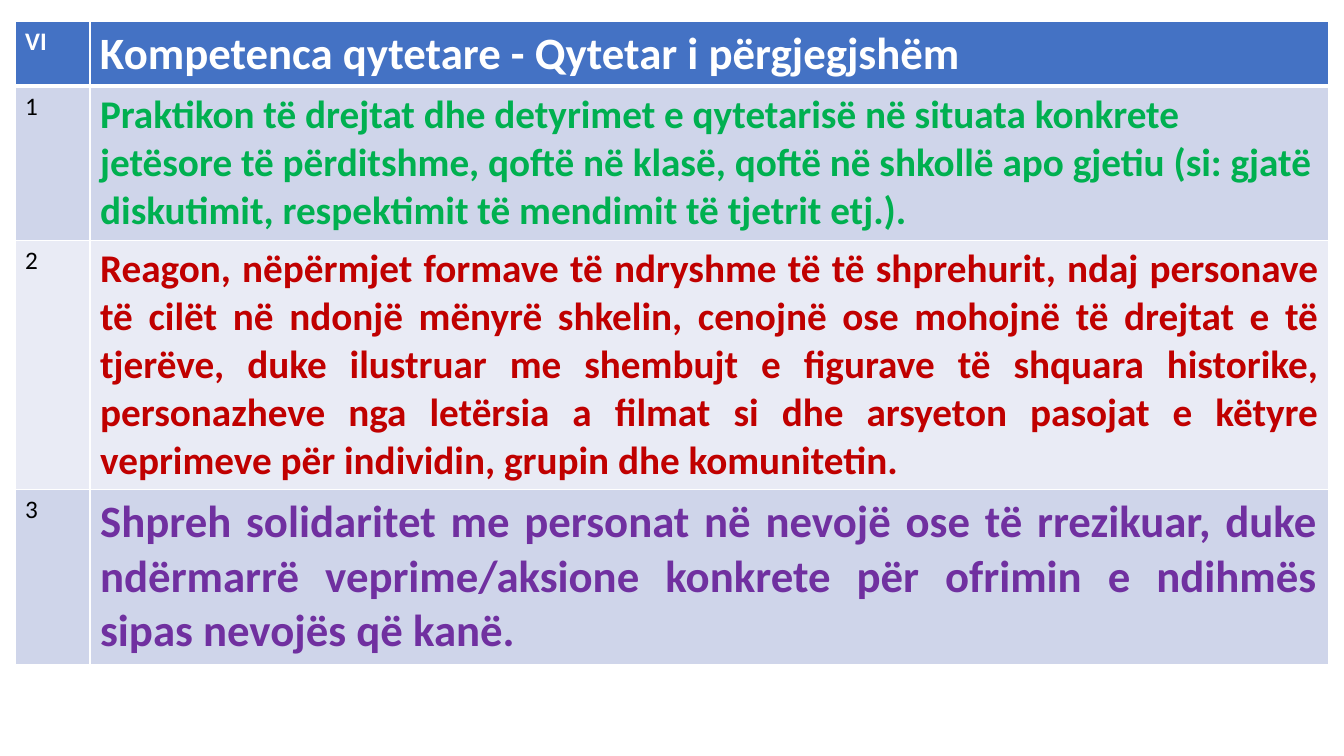
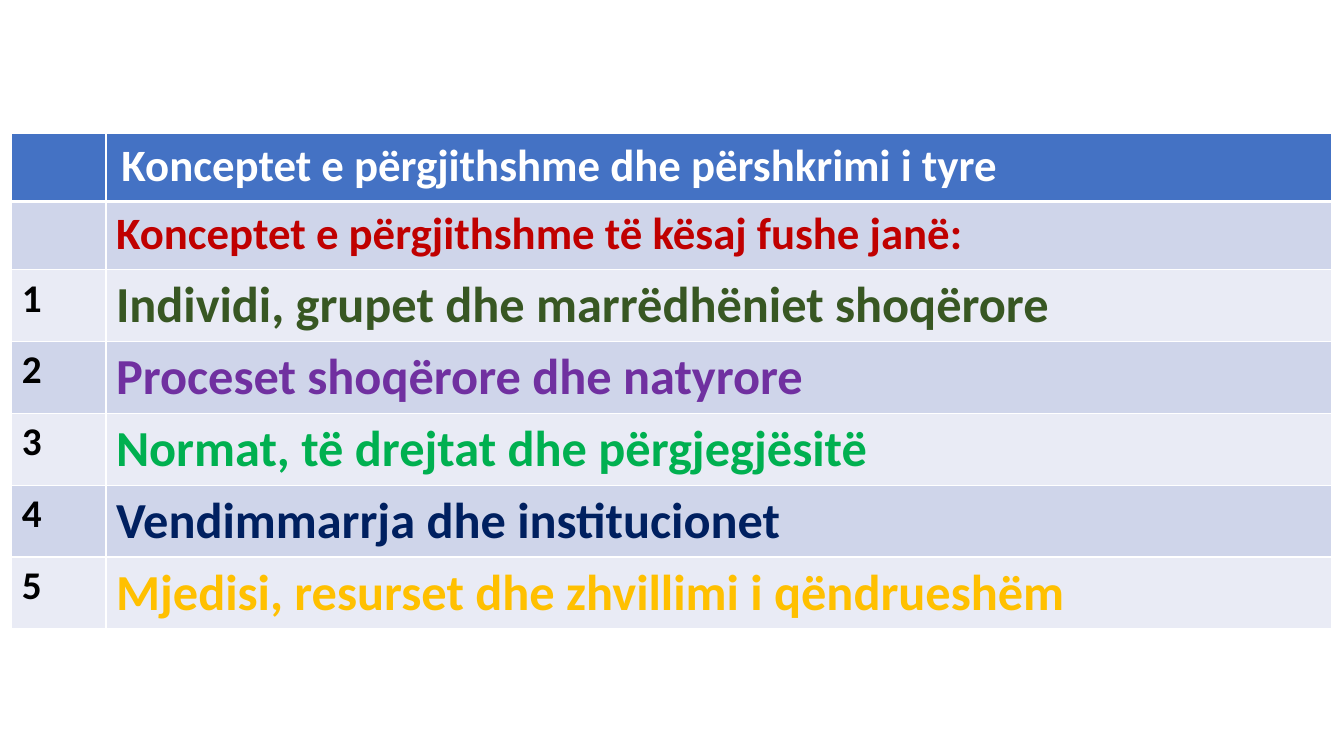
from lxml import etree
from pptx import Presentation
from pptx.dml.color import RGBColor
from pptx.enum.text import PP_ALIGN
from pptx.oxml.ns import qn
from pptx.util import Cm, Pt

LEFT, JUSTIFY = PP_ALIGN.LEFT, PP_ALIGN.JUSTIFY
FONT = "Calibri"
WHITE, BLACK, RED, GREEN, PURPLE = "FFFFFF", "000000", "C00000", "00B050", "7030A0"
HEADER_FILL = "4472C4"
BAND_FILLS = ("CFD5EA", "E9EBF5")
THIN, THICK = 1, 3
BLANK_LAYOUT = 6

TABLES = [
    {
        "position": (0.38, 0.54),
        "columns": (1.89, 31.2),
        "heights": (1.59, 3.81, 6.2, 4.28),
        "number": {"size": 18, "bold": False},
        "header_indent": 0.25,
        "rows": [
            ("VI", "Kompetenca qytetare - Qytetar i përgjegjshëm", 32, WHITE, LEFT),
            ("1", "Praktikon të drejtat dhe detyrimet e qytetarisë në situata konkrete "
                  "jetësore të përditshme, qoftë në klasë, qoftë në shkollë apo gjetiu "
                  "(si: gjatë diskutimit, respektimit të mendimit të tjetrit etj.).",
             28, GREEN, LEFT),
            ("2", "Reagon, nëpërmjet formave të ndryshme të të shprehurit, ndaj personave "
                  "të cilët në ndonjë mënyrë shkelin, cenojnë ose mohojnë të drejtat e të "
                  "tjerëve, duke ilustruar me shembujt e figurave të shquara historike, "
                  "personazheve nga letërsia a filmat si dhe arsyeton pasojat e këtyre "
                  "veprimeve për individin, grupin dhe komunitetin.",
             28, RED, JUSTIFY),
            ("3", "Shpreh solidaritet me personat në nevojë ose të rrezikuar, duke "
                  "ndërmarrë veprime/aksione konkrete për ofrimin e ndihmës sipas nevojës "
                  "që kanë.",
             32, PURPLE, JUSTIFY),
        ],
    },
    {
        "position": (0.3, 3.36),
        "columns": (2.37, 30.88),
        "heights": (1.72,) * 2 + (1.78,) * 5,
        "number": {"size": 28, "bold": True},
        "header_indent": 0.39,
        "rows": [
            ("", "Konceptet e përgjithshme dhe përshkrimi i tyre", 32, WHITE, LEFT),
            ("", "Konceptet e përgjithshme të kësaj fushe janë:", 32, RED, LEFT),
            ("1", "Individi, grupet dhe marrëdhëniet shoqërore", 36, "385723", LEFT),
            ("2", "Proceset shoqërore dhe natyrore", 36, PURPLE, LEFT),
            ("3", "Normat, të drejtat dhe përgjegjësitë", 36, GREEN, LEFT),
            ("4", "Vendimmarrja dhe institucionet", 36, "002060", LEFT),
            ("5", "Mjedisi, resurset dhe zhvillimi i qëndrueshëm", 36, "FFC000", LEFT),
        ],
    },
]


def color(value):
    return RGBColor.from_string(value)


def set_borders(cell, top, bottom):
    properties = cell._tc.get_or_add_tcPr()
    widths = {"a:lnL": THIN, "a:lnR": THIN, "a:lnT": top, "a:lnB": bottom}
    for index, (tag, width) in enumerate(widths.items()):
        line = etree.Element(qn(tag), w=str(Pt(width)))
        fill = etree.SubElement(line, qn("a:solidFill"))
        etree.SubElement(fill, qn("a:srgbClr"), val=WHITE)
        properties.insert(index, line)


def write_cell(cell, text, size, text_color, bold=True, alignment=LEFT):
    cell.text_frame.text = text
    paragraph = cell.text_frame.paragraphs[0]
    paragraph.alignment = alignment
    for run in paragraph.runs:
        run.font.name = FONT
        run.font.size = Pt(size)
        run.font.bold = bold
        run.font.color.rgb = color(text_color)


def add_table_slide(presentation, content):
    slide = presentation.slides.add_slide(presentation.slide_layouts[BLANK_LAYOUT])
    rows, columns, heights = content["rows"], content["columns"], content["heights"]
    left, top = content["position"]
    table = slide.shapes.add_table(
        len(rows), len(columns), Cm(left), Cm(top), Cm(sum(columns)), Cm(sum(heights))
    ).table
    for column, width in zip(table.columns, columns):
        column.width = Cm(width)
    for index, (number, text, size, text_color, alignment) in enumerate(rows):
        is_header = index == 0
        table.rows[index].height = Cm(heights[index])
        number_cell, text_cell = table.cell(index, 0), table.cell(index, 1)
        if is_header:
            write_cell(number_cell, number, 18, WHITE)
            text_cell.margin_left = Cm(content["header_indent"])
        else:
            write_cell(number_cell, number, text_color=BLACK, **content["number"])
        write_cell(text_cell, text, size, text_color, alignment=alignment)
        for cell in (number_cell, text_cell):
            cell.fill.solid()
            cell.fill.fore_color.rgb = color(HEADER_FILL if is_header else BAND_FILLS[(index - 1) % 2])
            set_borders(cell, THICK if index == 1 else THIN, THICK if is_header else THIN)


def main():
    presentation = Presentation()
    presentation.slide_width = Cm(33.87)
    presentation.slide_height = Cm(19.05)
    for content in TABLES:
        add_table_slide(presentation, content)
    presentation.save("out.pptx")


if __name__ == "__main__":
    main()
